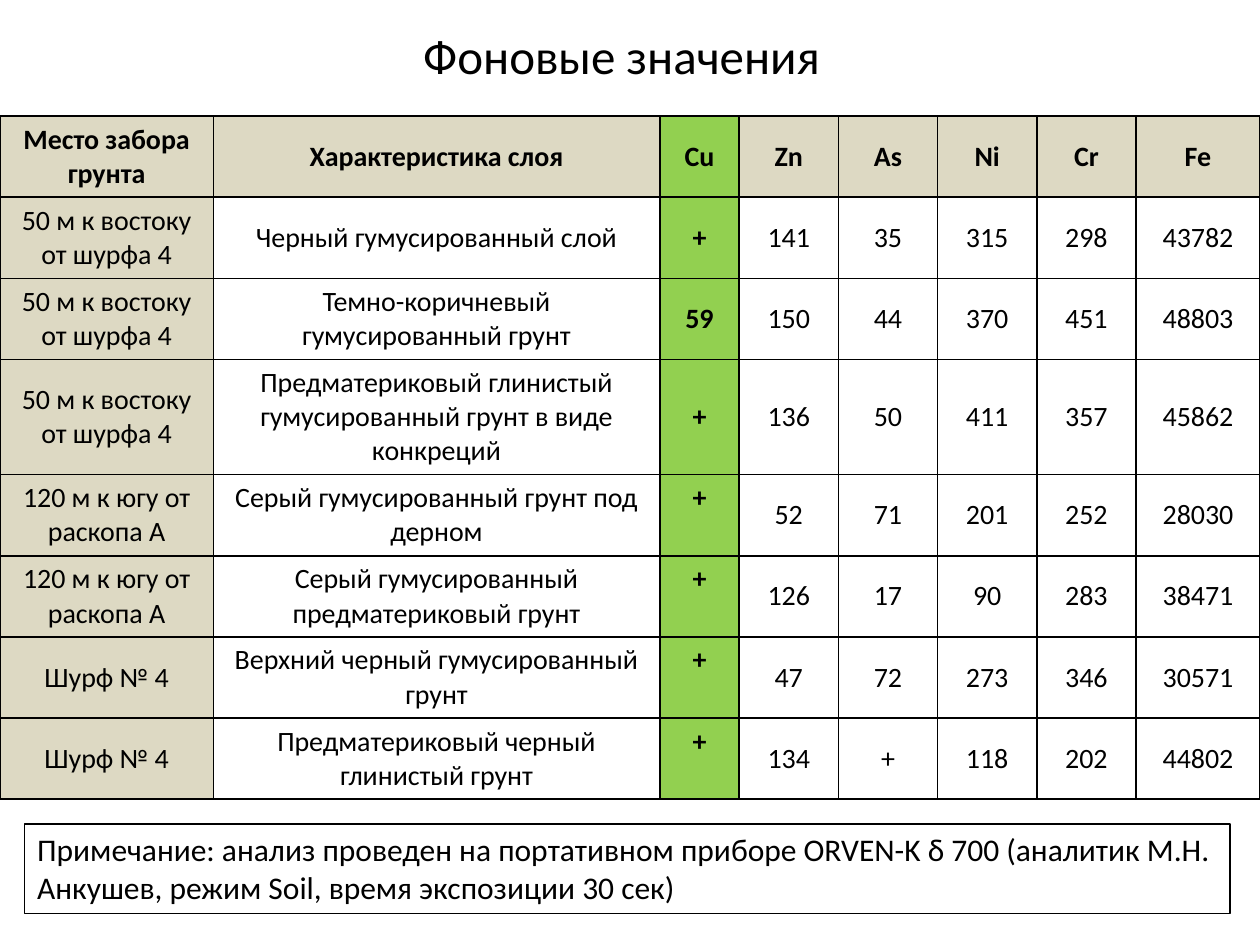
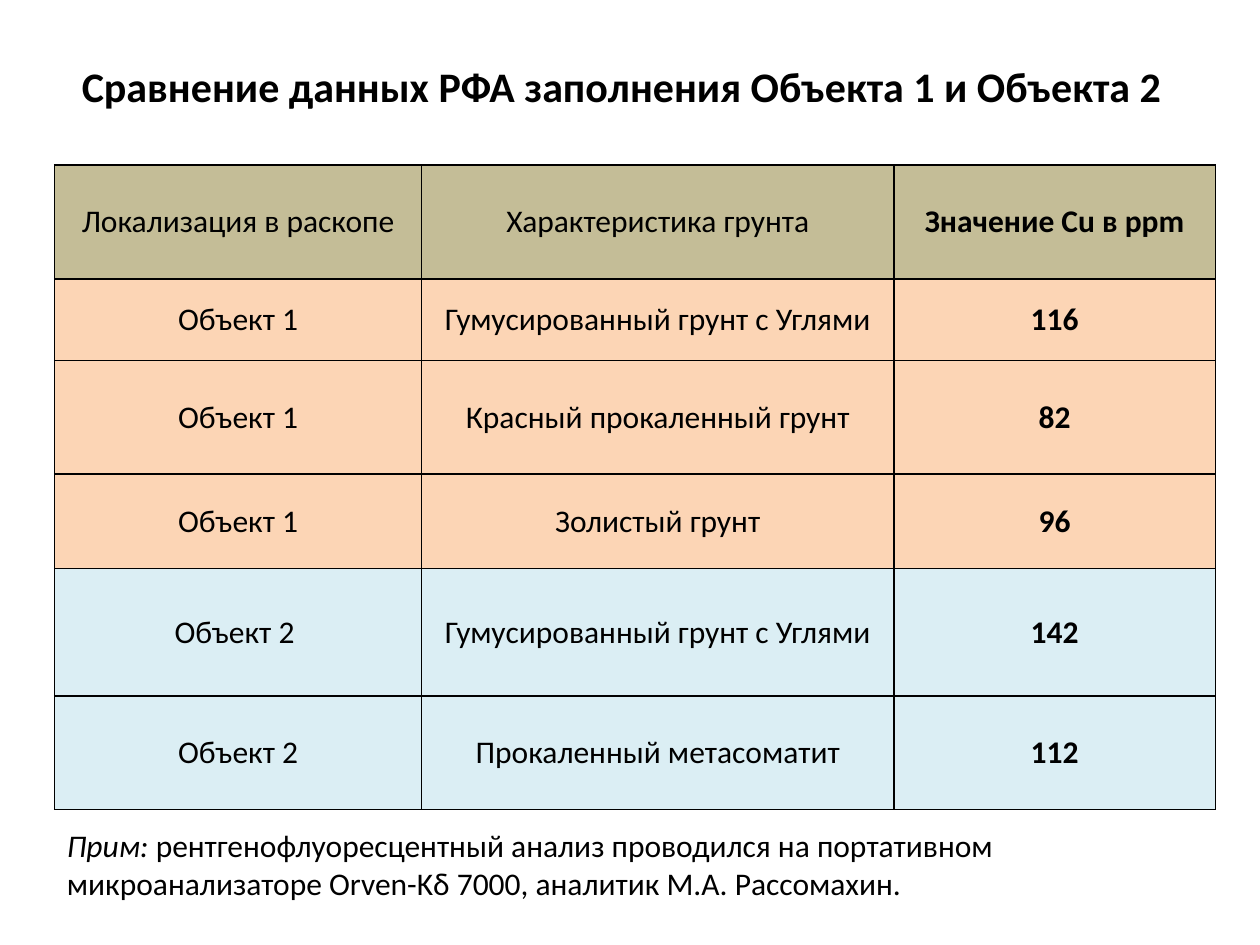
"""Build two slides of soil analysis tables: background values and a comparison of two objects."""
from lxml import etree
from pptx import Presentation
from pptx.dml.color import RGBColor
from pptx.enum.text import MSO_ANCHOR, MSO_AUTO_SIZE, PP_ALIGN
from pptx.oxml.ns import qn
from pptx.util import Cm, Pt

CENTER = PP_ALIGN.CENTER
LEFT = PP_ALIGN.LEFT
MIDDLE = MSO_ANCHOR.MIDDLE
TOP = MSO_ANCHOR.TOP
GROW = MSO_AUTO_SIZE.SHAPE_TO_FIT_TEXT

FONT = "Calibri"
BLACK = RGBColor(0x00, 0x00, 0x00)
WHITE = RGBColor(0xFF, 0xFF, 0xFF)
SAND = RGBColor(0xDD, 0xD9, 0xC3)
GREEN = RGBColor(0x92, 0xD0, 0x50)
OLIVE = RGBColor(0xC4, 0xBD, 0x97)
PEACH = RGBColor(0xFC, 0xD5, 0xB5)
PALE_BLUE = RGBColor(0xDB, 0xEE, 0xF4)

TITLE_ONLY = 5
EDGE = 1.1
BORDER_WIDTH = Pt(1)

SLIDES = [
    {
        "title": "Фоновые значения",
        "title_top": -0.48,
        "title_height": 3.18,
        "title_size": 28,
        "title_bold": False,
        "table_left": 0,
        "table_top": 2.34,
        "text_size": 16,
        "columns": [4.3, 9, 1.6, 2, 2, 2, 2, 2.5],
        "heights": [1.63, 1.63, 1.63, 2.32, 1.63, 1.63, 1.63, 1.63],
        "row_fills": [SAND] + [WHITE] * 7,
        "column_fills": {0: SAND, 2: GREEN},
        "bold_row": 0,
        "bold_column": 2,
        "raised_rows": range(4, 8),
        "rows": [
            ["Место забора грунта", "Характеристика слоя", "Cu", "Zn", "As", "Ni", "Cr", "Fe"],
            ["50 м к востоку от шурфа 4", "Черный гумусированный слой",
             "+", "141", "35", "315", "298", "43782"],
            ["50 м к востоку от шурфа 4", "Темно-коричневый гумусированный грунт",
             "59", "150", "44", "370", "451", "48803"],
            ["50 м к востоку от шурфа 4",
             "Предматериковый глинистый гумусированный грунт в виде конкреций",
             "+", "136", "50", "411", "357", "45862"],
            ["120 м к югу от раскопа А", "Серый гумусированный грунт под дерном",
             "+", "52", "71", "201", "252", "28030"],
            ["120 м к югу от раскопа А", "Серый гумусированный предматериковый грунт",
             "+", "126", "17", "90", "283", "38471"],
            ["Шурф № 4", "Верхний черный гумусированный грунт",
             "+", "47", "72", "273", "346", "30571"],
            ["Шурф № 4", "Предматериковый черный глинистый грунт",
             "+", "134", "+", "118", "202", "44802"],
        ],
        "note_place": (0.5, 16.61, 24.3, 1.8),
        "note_border": True,
        "note": [
            ("Примечание: анализ проведен на портативном приборе ORVEN-K δ 700 "
             "(аналитик М.Н. Анкушев, режим Soil, время экспозиции 30 сек)", False),
        ],
    },
    {
        "title": "Сравнение данных РФА заполнения Объекта 1 и Объекта 2",
        "title_top": 0.53,
        "title_height": 2.4,
        "title_size": 24,
        "title_bold": True,
        "table_left": EDGE,
        "table_top": 3.33,
        "text_size": 18,
        "columns": [7.4, 9.52, 6.48],
        "heights": [2.29, 1.65, 2.29, 1.9, 2.57, 2.29],
        "row_fills": [OLIVE] + [PEACH] * 3 + [PALE_BLUE] * 2,
        "column_fills": {},
        "bold_row": None,
        "bold_column": 2,
        "raised_rows": [],
        "rows": [
            ["Локализация в раскопе", "Характеристика грунта", "Значение Cu в ppm"],
            ["Объект 1", "Гумусированный грунт с Углями", "116"],
            ["Объект 1", "Красный прокаленный грунт", "82"],
            ["Объект 1", "Золистый грунт", "96"],
            ["Объект 2 ", "Гумусированный грунт с Углями", "142"],
            ["Объект 2", "Прокаленный метасоматит", "112"],
        ],
        "note_place": (EDGE, 16.53, 23.4, 1.8),
        "note_border": False,
        "note": [
            ("Прим: ", True),
            ("рентгенофлуоресцентный анализ проводился на портативном "
             "микроанализаторе Orven-Kδ 7000, аналитик М.А. Рассомахин.", False),
        ],
    },
]


def style_paragraph(para, size, bold=False, align=CENTER):
    para.alignment = align
    para.font.name = FONT
    para.font.size = Pt(size)
    para.font.bold = bold
    para.font.color.rgb = BLACK


def add_borders(cell):
    properties = cell._tc.get_or_add_tcPr()
    for position, side in enumerate(("a:lnL", "a:lnR", "a:lnT", "a:lnB")):
        line = etree.Element(qn(side), w=str(BORDER_WIDTH))
        fill = etree.SubElement(line, qn("a:solidFill"))
        etree.SubElement(fill, qn("a:srgbClr"), val=str(BLACK))
        properties.insert(position, line)


deck = Presentation()
deck.slide_width = Cm(25.4)
deck.slide_height = Cm(19.05)

for content in SLIDES:
    page = deck.slides.add_slide(deck.slide_layouts[TITLE_ONLY])

    title = page.shapes.title
    title.left, title.top = Cm(EDGE), Cm(content["title_top"])
    title.width, title.height = Cm(22.86), Cm(content["title_height"])
    title.text_frame.text = content["title"]
    title.text_frame.vertical_anchor = MIDDLE
    style_paragraph(title.text_frame.paragraphs[0], content["title_size"], content["title_bold"])

    rows, columns, heights = content["rows"], content["columns"], content["heights"]
    table = page.shapes.add_table(
        len(rows), len(columns), Cm(content["table_left"]), Cm(content["table_top"]),
        Cm(sum(columns)), Cm(sum(heights))).table
    table.first_row = False
    table.horz_banding = False
    for column, width in zip(table.columns, columns):
        column.width = Cm(width)
    for row, height in zip(table.rows, heights):
        row.height = Cm(height)

    for r, texts in enumerate(rows):
        for c, text in enumerate(texts):
            cell = table.cell(r, c)
            cell.text = text
            is_key = c == content["bold_column"]
            cell.vertical_anchor = TOP if is_key and r in content["raised_rows"] else MIDDLE
            cell.fill.solid()
            cell.fill.fore_color.rgb = content["column_fills"].get(c, content["row_fills"][r])
            style_paragraph(cell.text_frame.paragraphs[0], content["text_size"],
                            is_key or r == content["bold_row"])
            add_borders(cell)

    note = page.shapes.add_textbox(*[Cm(length) for length in content["note_place"]])
    note.text_frame.word_wrap = True
    note.text_frame.auto_size = GROW
    if content["note_border"]:
        note.line.color.rgb = BLACK
        note.line.width = Pt(0.75)
    para = note.text_frame.paragraphs[0]
    style_paragraph(para, 18, align=LEFT)
    for text, italic in content["note"]:
        span = para.add_run()
        span.text = text
        span.font.italic = italic

deck.save("out.pptx")
